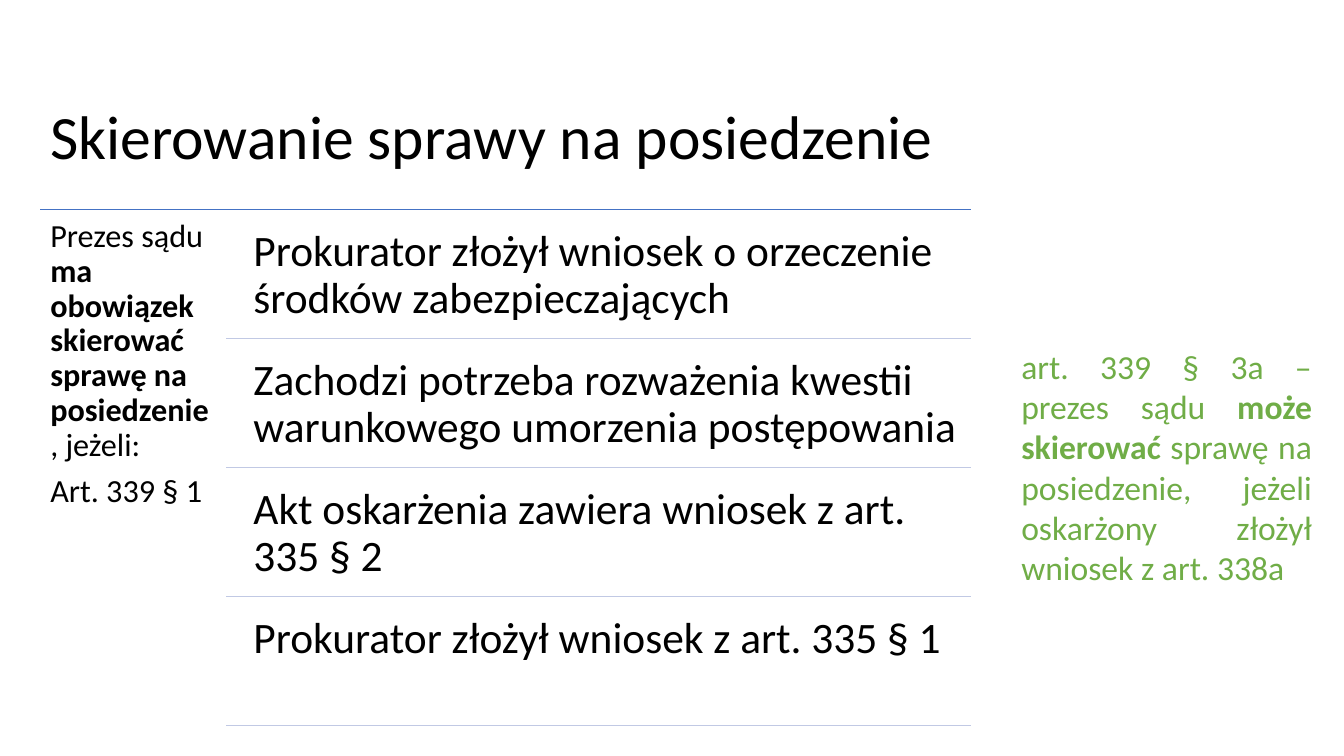
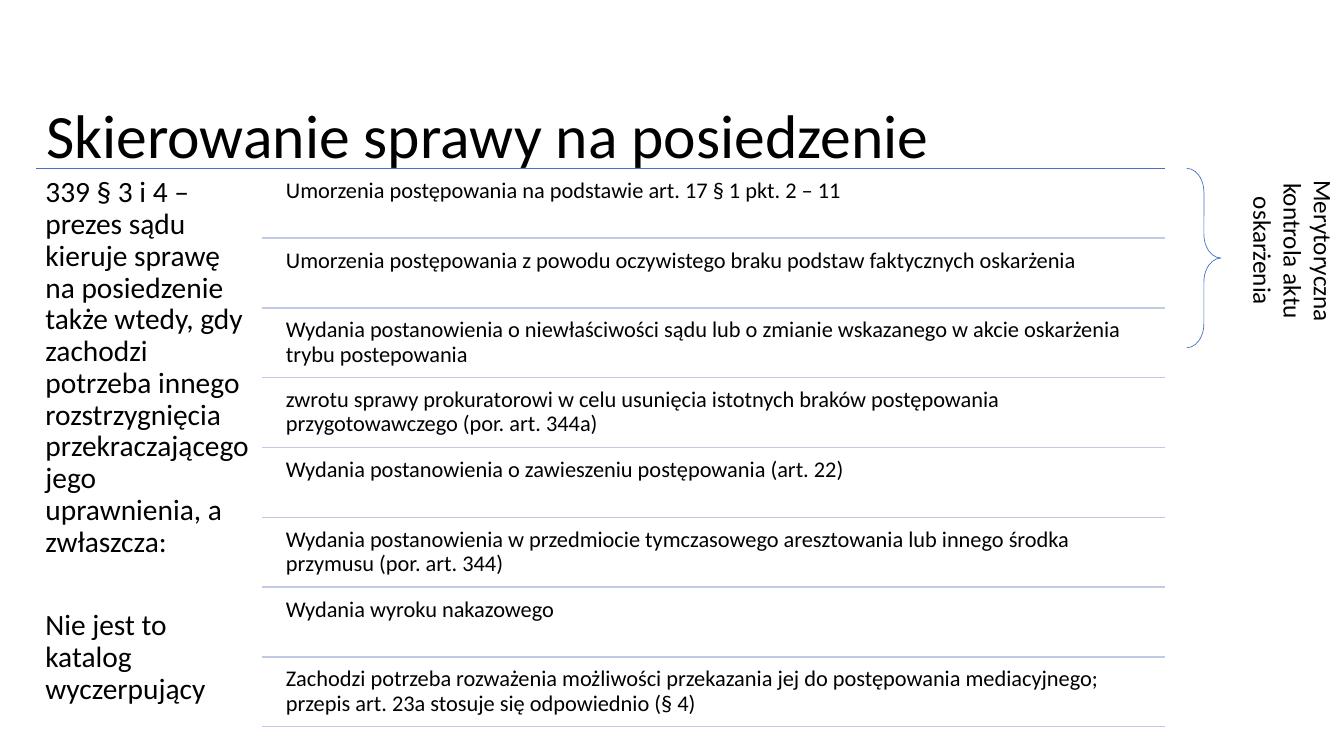
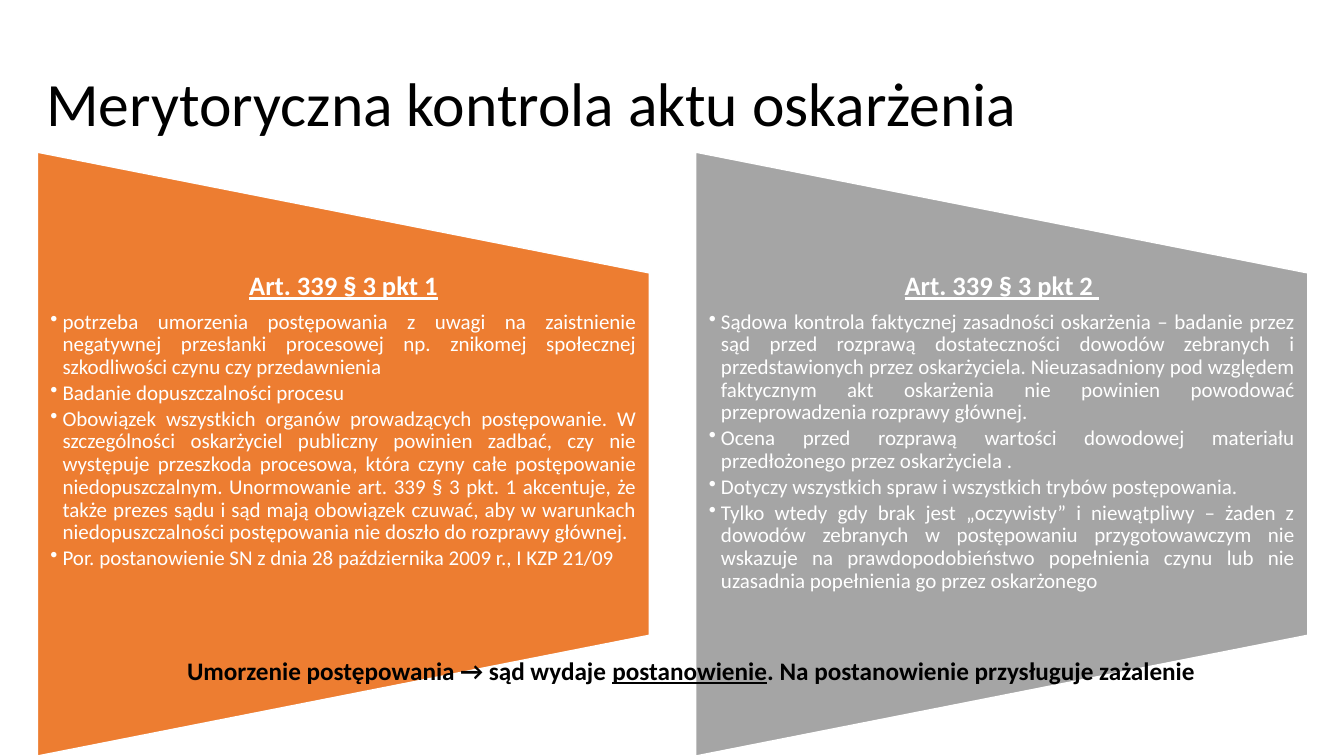
import lxml.etree
import pptx
import pptx.dml.color
import pptx.enum.shapes
import pptx.enum.text
import pptx.oxml.ns
import pptx.util

COLORS = {
    "text": "000000",
    "accent": "4472C4",
    "rule": "C1C9E4",
    "note": "70AD47",
    "orange": "ED7D31",
    "gray": "A5A5A5",
    "white": "FFFFFF",
}
FONT = "Calibri"
ALIGN = pptx.enum.text.PP_ALIGN
SHAPES = pptx.enum.shapes.MSO_SHAPE


def color(name):
    """Return the named palette colour."""
    return pptx.dml.color.RGBColor.from_string(COLORS[name])


class Deck:
    """Hold the style and the current slide; lengths are percent of the slide."""

    def __init__(self):
        """Start a wide presentation."""
        self.presentation = pptx.Presentation()
        self.presentation.slide_width = pptx.util.Inches(13.33)
        self.presentation.slide_height = pptx.util.Inches(7.5)
        self.slide = None

    def x(self, share):
        """Turn a percentage of the slide width into a length."""
        return round(self.presentation.slide_width * share / 100)

    def y(self, share):
        """Turn a percentage of the slide height into a length."""
        return round(self.presentation.slide_height * share / 100)

    def new_slide(self, title, left, top):
        """Add a blank slide with its title."""
        self.slide = self.presentation.slides.add_slide(self.presentation.slide_layouts[6])
        frame = self.text((left, top, 94.6, 18.67), [title], 44, spacing=0.9)
        frame.vertical_anchor = pptx.enum.text.MSO_ANCHOR.MIDDLE

    def text(self, box, paragraphs, size, inset=(0.1, 0.05), **style):
        """Add a wrapping text box and return its text frame."""
        left, top, width, height = box
        shape = self.slide.shapes.add_textbox(
            self.x(left), self.y(top), self.x(width), self.y(height))
        frame = shape.text_frame
        frame.word_wrap = True
        frame.margin_left = frame.margin_right = pptx.util.Inches(inset[0])
        frame.margin_top = frame.margin_bottom = pptx.util.Inches(inset[1])
        for index, content in enumerate(paragraphs):
            paragraph = frame.paragraphs[0] if index == 0 else frame.add_paragraph()
            self.fill_paragraph(paragraph, content, size, **style)
        return frame

    def fill_paragraph(self, paragraph, content, size, ink="text", align=ALIGN.LEFT,
                       spacing=1.0, after=0, bullet=False):
        """Fill a paragraph from a string or from (text, marks) pieces."""
        if bullet:
            properties = paragraph._p.get_or_add_pPr()
            indent = pptx.util.Inches(0.12)
            properties.set("marL", str(indent))
            properties.set("indent", str(-indent))
            lxml.etree.SubElement(properties, pptx.oxml.ns.qn("a:buChar"), char="•")
        paragraph.alignment = align
        paragraph.line_spacing = spacing
        paragraph.space_after = pptx.util.Pt(after)
        pieces = [(content, "")] if isinstance(content, str) else content
        for words, marks in pieces:
            run = paragraph.add_run()
            run.text = words
            run.font.name = FONT
            run.font.size = pptx.util.Pt(size)
            run.font.color.rgb = color(ink)
            run.font.bold = "b" in marks
            run.font.underline = "u" in marks

    def rule(self, left, right, top, ink):
        """Draw a thin horizontal line."""
        line = self.slide.shapes.add_connector(
            pptx.enum.shapes.MSO_CONNECTOR.STRAIGHT,
            self.x(left), self.y(top), self.x(right), self.y(top))
        line.line.color.rgb = color(ink)
        line.line.width = pptx.util.Pt(1)
        lxml.etree.SubElement(line._element.spPr, pptx.oxml.ns.qn("a:effectLst"))

    def lined_list(self, box, lead, lead_size, lead_inset, lead_after, items, size, inset):
        """Put a lead column beside equal rows parted by lines."""
        left, top, width, height = box
        right, column, pitch = left + width, left + width * 0.2, height / len(items)
        self.rule(left, right, top, "accent")
        self.text((left, top, width * 0.2, height), lead, lead_size,
                  (lead_inset, lead_inset), spacing=0.9, after=lead_after)
        text_left = column + width * 0.015
        for index, item in enumerate(items):
            row_top = top + index * pitch
            self.text((text_left, row_top + pitch * 0.05, right - text_left, pitch * 0.95),
                      [item], size, (inset, inset), spacing=0.9)
            self.rule(column, right, row_top + pitch, "rule")

    def brace(self, left, top, width, height):
        """Draw a thin right brace."""
        shape = self.slide.shapes.add_shape(
            SHAPES.RIGHT_BRACE, self.x(left), self.y(top), self.x(width), self.y(height))
        shape.shadow.inherit = False
        shape.adjustments[0] = 0.7
        shape.fill.background()
        shape.line.color.rgb = color("accent")
        shape.line.width = pptx.util.Pt(0.5)

    def panel(self, box, fill, heading, points):
        """Draw a panel that narrows to the right, with a heading and bullets."""
        left, top, width, height = box
        wide, high = self.x(width), self.y(height)
        shape = self.slide.shapes.add_shape(
            SHAPES.FLOWCHART_MANUAL_OPERATION,
            self.x(left) + (wide - high) // 2, self.y(top) + (high - wide) // 2, high, wide)
        shape.rotation = 270
        shape.shadow.inherit = False
        shape.fill.solid()
        shape.fill.fore_color.rgb = color(fill)
        shape.line.color.rgb = color("white")
        shape.line.width = pptx.util.Pt(1)
        frame = self.text((left, top + height * 0.2, width, height * 0.6),
                          [[(heading, "bu")]], 19, (0.13, 0), ink="white",
                          align=ALIGN.CENTER, spacing=0.9, after=6.65)
        for point in points:
            self.fill_paragraph(frame.add_paragraph(), point, 15, ink="white",
                                align=ALIGN.JUSTIFY, spacing=0.9, after=2.25, bullet=True)


def duty_slide(deck):
    """Build the slide on mandatory referral."""
    deck.new_slide("Skierowanie sprawy na posiedzenie", 3, 9.07)
    lead = [
        [("Prezes sądu ", ""), ("ma obowiązek skierować sprawę na posiedzenie", "b"),
         (", jeżeli:", "")],
        "Art. 339 § 1",
    ]
    items = [
        "Prokurator złożył wniosek o orzeczenie środków zabezpieczających",
        "Zachodzi potrzeba rozważenia kwestii warunkowego umorzenia postępowania",
        "Akt oskarżenia zawiera wniosek z art. 335 § 2",
        "Prokurator złożył wniosek z art. 335 § 1",
    ]
    deck.lined_list((3, 27.73, 69.25, 68.27), lead, 23, 0.1, 8, items, 31, 0.13)
    note = [("art. 339 § 3a – prezes sądu ", ""), ("może skierować ", "b"),
            ("sprawę na posiedzenie, jeżeli oskarżony złożył wniosek z art. 338a", "")]
    deck.text((75.25, 45.07, 23.1, 44.4), [note], 24, ink="note", align=ALIGN.JUSTIFY)


def other_grounds_slide(deck):
    """Build the slide on further grounds for referral."""
    deck.new_slide("Skierowanie sprawy na posiedzenie", 2.7, 8.93)
    lead = [
        "339 § 3 i 4 – prezes sądu kieruje sprawę na posiedzenie także wtedy, gdy zachodzi "
        "potrzeba innego rozstrzygnięcia przekraczającego jego uprawnienia, a zwłaszcza:",
        "Nie jest to katalog wyczerpujący",
    ]
    items = [
        "Umorzenia postępowania na podstawie art. 17 § 1 pkt. 2 – 11",
        "Umorzenia postępowania z powodu oczywistego braku podstaw faktycznych oskarżenia",
        "Wydania postanowienia o niewłaściwości sądu lub o zmianie wskazanego w akcie "
        "oskarżenia trybu postepowania",
        "zwrotu sprawy prokuratorowi w celu usunięcia istotnych braków postępowania "
        "przygotowawczego (por. art. 344a)",
        "Wydania postanowienia o zawieszeniu postępowania (art. 22)",
        "Wydania postanowienia w przedmiocie tymczasowego aresztowania lub innego środka "
        "przymusu (por. art. 344)",
        "Wydania wyroku nakazowego",
        "Zachodzi potrzeba rozważenia możliwości przekazania jej do postępowania "
        "mediacyjnego; przepis art. 23a stosuje się odpowiednio (§ 4)",
    ]
    deck.lined_list((2.7, 22.27, 83.95, 73.87), lead, 21, 0.09, 37, items, 16, 0.07)
    deck.brace(88.3, 22.27, 2.55, 23.73)
    frame = deck.text((91.67, 20.4, 8.33, 25.6), ["Merytoryczna kontrola aktu oskarżenia"],
                      18, align=ALIGN.CENTER)
    frame._txBody.bodyPr.set("vert", "vert")


def review_slide(deck):
    """Build the slide on the review of the indictment."""
    deck.new_slide("Merytoryczna kontrola aktu oskarżenia", 2.7, 4.8)
    panels = [
        ("orange", "Art. 339 § 3 pkt 1", [
            "potrzeba umorzenia postępowania z uwagi na zaistnienie negatywnej przesłanki "
            "procesowej np. znikomej społecznej szkodliwości czynu czy przedawnienia",
            "Badanie dopuszczalności procesu",
            "Obowiązek wszystkich organów prowadzących postępowanie. W szczególności "
            "oskarżyciel publiczny powinien zadbać, czy nie występuje przeszkoda procesowa, "
            "która czyny całe postępowanie niedopuszczalnym. Unormowanie art. 339 § 3 pkt. 1 "
            "akcentuje, że także prezes sądu i sąd mają obowiązek czuwać, aby w warunkach "
            "niedopuszczalności postępowania nie doszło do rozprawy głównej.",
            "Por. postanowienie SN z dnia 28 października 2009 r., I KZP 21/09",
        ]),
        ("gray", "Art. 339 § 3 pkt 2 ", [
            "Sądowa kontrola faktycznej zasadności oskarżenia – badanie przez sąd przed "
            "rozprawą dostateczności dowodów zebranych i przedstawionych przez oskarżyciela. "
            "Nieuzasadniony pod względem faktycznym akt oskarżenia nie powinien powodować "
            "przeprowadzenia rozprawy głównej.",
            "Ocena przed rozprawą wartości dowodowej materiału przedłożonego przez "
            "oskarżyciela .",
            "Dotyczy wszystkich spraw i wszystkich trybów postępowania.",
            "Tylko wtedy gdy brak jest „oczywisty” i niewątpliwy – żaden z dowodów zebranych "
            "w postępowaniu przygotowawczym nie wskazuje na prawdopodobieństwo popełnienia "
            "czynu lub nie uzasadnia popełnienia go przez oskarżonego",
        ]),
    ]
    for index, (fill, heading, points) in enumerate(panels):
        deck.panel((2.78 + index * 48.99, 20.13, 45.54, 79.87), fill, heading, points)
    outcome = [("Umorzenie postępowania → sąd wydaje ", "b"), ("postanowienie", "bu"),
               (". Na postanowienie przysługuje zażalenie", "b")]
    deck.text((12.9, 86, 77.04, 9.47), [outcome], 18, align=ALIGN.CENTER)


def main():
    """Build and save the presentation."""
    deck = Deck()
    duty_slide(deck)
    other_grounds_slide(deck)
    review_slide(deck)
    deck.presentation.save("out.pptx")


if __name__ == "__main__":
    main()
